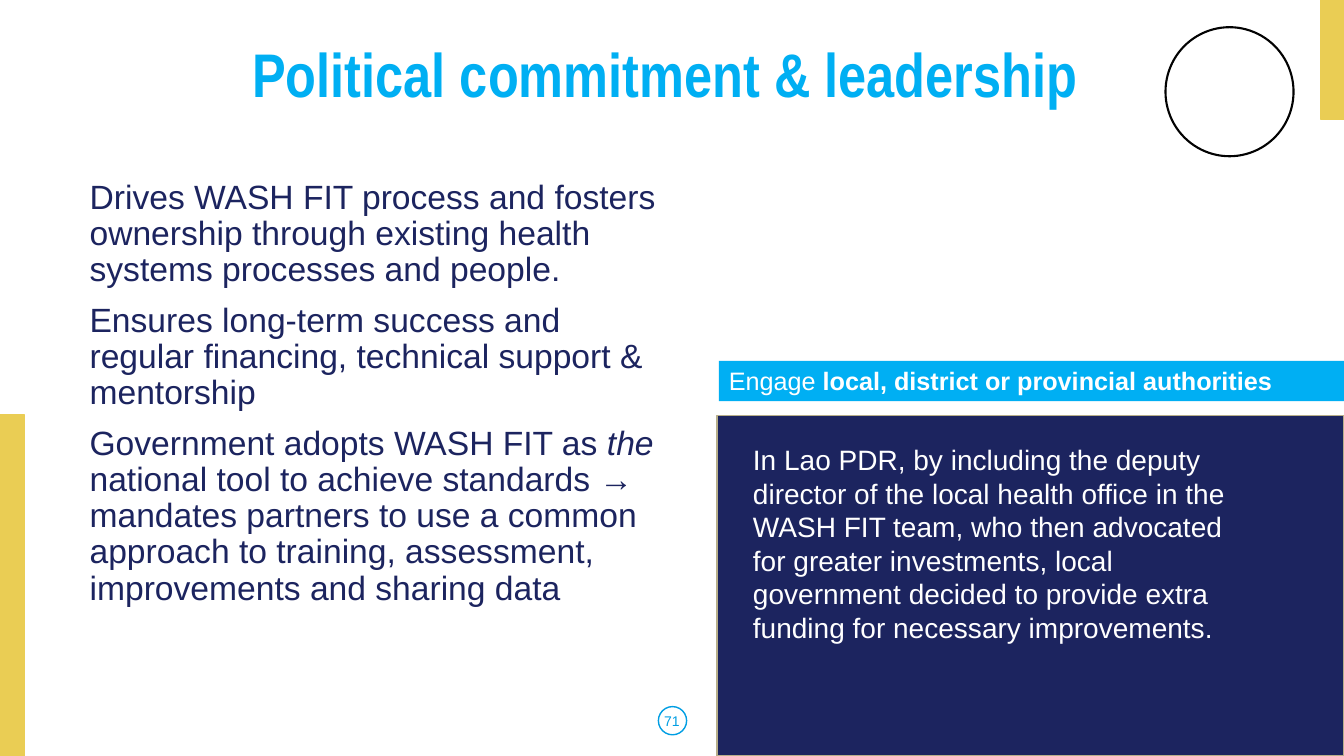
import dataclasses

import pptx
import pptx.dml.color
import pptx.enum.shapes
import pptx.enum.text
import pptx.util

Inches = pptx.util.Inches
Pt = pptx.util.Pt
SHAPE = pptx.enum.shapes.MSO_SHAPE
ALIGN = pptx.enum.text.PP_ALIGN
ANCHOR = pptx.enum.text.MSO_ANCHOR


@dataclasses.dataclass(frozen=True)
class Theme:
    navy: str = "1C245F"
    sky: str = "00AFF3"
    blue: str = "009EE3"
    gold: str = "EACD54"
    khaki: str = "B7AE8A"
    black: str = "020202"
    white: str = "FFFFFF"
    font: str = "Arial"
    title_font: str = "Arial Narrow"
    title_size: int = 44
    body_size: int = 24
    case_size: int = 20
    banner_size: int = 18
    number_size: int = 10


def rgb(value):
    return pptx.dml.color.RGBColor.from_string(value)


def write(tf, paragraphs, *, size, color, font=Theme.font, align=ALIGN.LEFT,
          anchor=ANCHOR.TOP, spacing=None, before=None):
    """Fill a text frame; each paragraph is a list of (text, style) runs, style "", "b" or "i"."""
    tf.word_wrap = True
    tf.auto_size = pptx.enum.text.MSO_AUTO_SIZE.NONE
    tf.vertical_anchor = anchor
    for i, runs in enumerate(paragraphs):
        p = tf.add_paragraph() if i else tf.paragraphs[0]
        p.alignment = align
        p.line_spacing = spacing
        if before is not None:
            p.space_before = Pt(before)
        for text, style in runs:
            r = p.add_run()
            r.text = text
            r.font.name = font
            r.font.size = Pt(size)
            r.font.bold = style == "b"
            r.font.italic = style == "i"
            r.font.color.rgb = rgb(color)


class SlideBuilder:
    def __init__(self, prs, theme):
        self.theme = theme
        self.s = prs.slides.add_slide(prs.slide_layouts[5])

    def title(self, text, box):
        sp = self.s.shapes.title
        sp.left, sp.top, sp.width, sp.height = map(Inches, box)
        write(sp.text_frame, [[(text, "b")]], size=self.theme.title_size,
              color=self.theme.sky, font=self.theme.title_font,
              align=ALIGN.CENTER, spacing=0.9, before=10)

    def shape(self, kind, box, fill=None, line=None, width=1):
        sp = self.s.shapes.add_shape(kind, *map(Inches, box))
        sp.shadow.inherit = False
        if fill:
            sp.fill.solid()
            sp.fill.fore_color.rgb = rgb(fill)
        else:
            sp.fill.background()
        if line:
            sp.line.color.rgb = rgb(line)
            sp.line.width = Pt(width)
        else:
            sp.line.fill.background()
        return sp

    def text(self, box, paragraphs, **style):
        sp = self.s.shapes.add_textbox(*map(Inches, box))
        write(sp.text_frame, paragraphs, **style)


def main():
    prs = pptx.Presentation()
    prs.slide_width, prs.slide_height = Inches(13.33), Inches(7.5)
    t = Theme()
    b = SlideBuilder(prs, t)

    b.shape(SHAPE.RECTANGLE, (7.11, 4.12, 6.22, 3.38), t.navy, t.khaki)
    for gold_bar in ((0, 4.11, 0.24, 3.39), (13.1, 0, 0.24, 1.18)):
        b.shape(SHAPE.RECTANGLE, gold_bar, t.gold, t.gold)
    b.shape(SHAPE.OVAL, (6.53, 7.01, 0.28, 0.28), line=t.blue)

    b.title("Political commitment & leadership ", (0.92, 0.39, 11.5, 0.79))
    b.text((0.79, 1.74, 5.91, 5.21), [
        [("Drives WASH FIT process and fosters ownership through existing "
          "health systems processes and people.", "")],
        [("Ensures long-term success and regular financing, technical "
          "support & mentorship", "")],
        [("Government adopts WASH FIT as ", ""), ("the ", "i"),
         ("national tool to achieve standards → mandates partners to use a "
          "common approach to training, assessment, improvements and "
          "sharing data", "")],
    ], size=t.body_size, color=t.navy, spacing=0.9, before=10)

    case = b.shape(SHAPE.RECTANGLE, (7.37, 4.34, 5.17, 2.12), line=t.navy, width=0.75)
    write(case.text_frame, [[
        ("In Lao PDR, by including the deputy director of the local health "
         "office in the WASH FIT team, who then advocated for greater "
         "investments, local government decided to provide extra funding "
         "for necessary improvements.", "")]],
        size=t.case_size, color=t.white)

    b.shape(SHAPE.OVAL, (11.56, 0.27, 1.27, 1.28), line=t.black, width=1.5)

    banner = b.shape(SHAPE.RECTANGLE, (7.13, 3.58, 6.2, 0.4), t.sky)
    write(banner.text_frame,
          [[("Engage ", ""), ("local, district or provincial authorities", "b")]],
          size=t.banner_size, color=t.white)

    b.text((0, 6.95, 13.33, 0.4), [[("71", "")]], size=t.number_size,
           color=t.blue, align=ALIGN.CENTER, anchor=ANCHOR.MIDDLE)

    prs.save("out.pptx")


if __name__ == "__main__":
    main()
